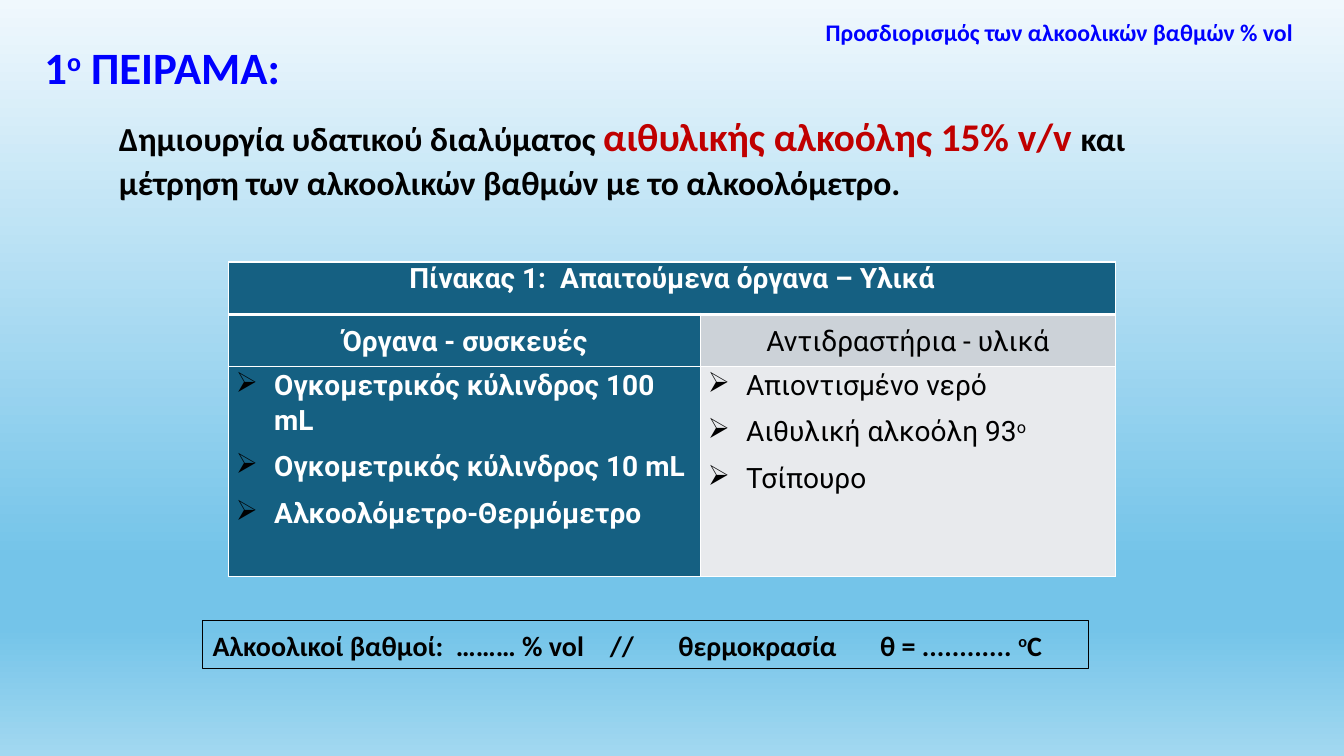
"""Builds the slide for the first alcohol-degree experiment."""
import dataclasses

import lxml.etree
import pptx
import pptx.dml.color
import pptx.enum.shapes
import pptx.enum.text
import pptx.oxml.ns
import pptx.util

PX = 9144
qn = pptx.oxml.ns.qn
Align = pptx.enum.text.PP_ALIGN
Anchor = pptx.enum.text.MSO_ANCHOR


@dataclasses.dataclass(frozen=True)
class Theme:
    blue: str = "0000FF"
    red: str = "C00000"
    black: str = "000000"
    white: str = "FFFFFF"
    teal: str = "156082"
    grey: str = "CCD2D8"
    pale: str = "E8EAED"
    sky: tuple = ((0, "F0F8FD"), (74, "74C4E9"), (83, "74C4E9"), (100, "A2D8F0"))
    text_font: str = "Calibri"
    table_font: str = "Roboto"
    header_size: int = 17
    table_size: int = 20
    body_size: int = 24
    accent_size: int = 28
    title_size: int = 32


def rgb(value):
    return pptx.dml.color.RGBColor.from_string(value)


def add_element(parent, tag, **attributes):
    return lxml.etree.SubElement(parent, qn(tag), attributes)


class SlideBuilder:
    def __init__(self, page, theme):
        self.page = page
        self.theme = theme

    def background(self):
        fill = self.page.background.fill
        fill.gradient()
        fill.gradient_angle = 270
        stops = next(self.page._element.iter(qn("a:gsLst")))
        for stop in list(stops):
            stops.remove(stop)
        for percent, color in self.theme.sky:
            stop = add_element(stops, "a:gs", pos=str(percent * 1000))
            add_element(stop, "a:srgbClr", val=color)

    def fill_para(self, para, spans, size, color, bold=True, font=None, align=Align.LEFT,
                  line=1.07, before=0, after=8):
        para.alignment = align
        para.line_spacing = line
        para.space_before = pptx.util.Pt(before)
        para.space_after = pptx.util.Pt(after)
        for text, changes in spans:
            span = para.add_run()
            span.text = text
            span.font.name = font or self.theme.text_font
            span.font.size = pptx.util.Pt(changes.get("size", size))
            span.font.bold = bold
            span.font.color.rgb = rgb(changes.get("color", color))
            if changes.get("raised"):
                span._r.get_or_add_rPr().set("baseline", "30000")

    def indent(self, para, left, first=0):
        properties = para._p.get_or_add_pPr()
        properties.set("marL", str(left * PX))
        properties.set("indent", str(first * PX))
        return properties

    def tabs(self, para, stops):
        tab_list = add_element(para._p.get_or_add_pPr(), "a:tabLst")
        for stop in stops:
            add_element(tab_list, "a:tab", pos=str(stop * PX), algn="l")

    def frame(self, shape, anchor):
        frame = shape.text_frame
        frame.word_wrap = True
        frame.auto_size = pptx.enum.text.MSO_AUTO_SIZE.NONE
        frame.vertical_anchor = anchor
        return frame.paragraphs[0]

    def placeholder(self, index, area, spans, size, color):
        shape = self.page.placeholders[index]
        shape.left, shape.top, shape.width, shape.height = (n * PX for n in area)
        para = self.frame(shape, Anchor.BOTTOM)
        self.fill_para(para, spans, size, color, after=6)
        add_element(self.indent(para, 0), "a:buNone")

    def header(self, area, text):
        shape = self.page.shapes.add_textbox(*(n * PX for n in area))
        para = self.frame(shape, Anchor.MIDDLE)
        self.fill_para(para, [(text, {})], self.theme.header_size, self.theme.blue,
                       line=0.97, after=6)
        self.indent(para, 50)

    def outlined_box(self, area, spans, stops):
        rectangle = pptx.enum.shapes.MSO_SHAPE.RECTANGLE
        shape = self.page.shapes.add_shape(rectangle, *(n * PX for n in area))
        shape.shadow.inherit = False
        shape.fill.background()
        shape.line.color.rgb = rgb(self.theme.black)
        shape.line.width = pptx.util.Pt(0.75)
        para = self.frame(shape, Anchor.TOP)
        self.fill_para(para, spans, self.theme.table_size, self.theme.black, before=6)
        self.tabs(para, stops)

    def table(self, area, columns, rows):
        shape = self.page.shapes.add_table(
            len(rows), len(columns), *(n * PX for n in area))
        table = shape.table
        table.first_row = table.horz_banding = False
        for column, width in zip(table.columns, columns):
            column.width = width * PX
        for row, height in zip(table.rows, rows):
            row.height = height * PX
        return table

    def cell(self, cell, fill, anchor, top=1, bottom=1):
        cell.margin_left = cell.margin_right = 7 * PX
        cell.margin_top = cell.margin_bottom = 0
        cell.vertical_anchor = anchor
        properties = cell._tc.get_or_add_tcPr()
        for side, points in (("L", 1), ("R", 1), ("T", top), ("B", bottom)):
            line = add_element(properties, "a:ln" + side, w=str(points * 12700))
            solid = add_element(line, "a:solidFill")
            add_element(solid, "a:srgbClr", val=self.theme.white)
        cell.fill.solid()
        cell.fill.fore_color.rgb = rgb(fill)

    def heading(self, cell, text, color, bold=True, **spacing):
        self.fill_para(cell.text_frame.paragraphs[0], [(text, {})],
                       self.theme.table_size, color, bold, self.theme.table_font,
                       Align.CENTER, **spacing)

    def bullets(self, cell, items, color, bold, align):
        frame = cell.text_frame
        for number, spans in enumerate(items):
            para = frame.add_paragraph() if number else frame.paragraphs[0]
            self.fill_para(para, spans, self.theme.table_size, color, bold,
                           self.theme.table_font, align)
            properties = self.indent(para, 38, -38)
            bullet_color = add_element(properties, "a:buClr")
            add_element(bullet_color, "a:srgbClr", val=self.theme.black)
            add_element(properties, "a:buChar", char="➢")


def main():
    theme = Theme()
    deck = pptx.Presentation()
    deck.slide_width, deck.slide_height = 1333 * PX, 750 * PX
    builder = SlideBuilder(deck.slides.add_slide(deck.slide_layouts[1]), theme)
    raised = {"raised": True}

    builder.background()
    builder.header((759, 9, 552, 48), "Προσδιορισμός των αλκοολικών βαθμών % vol")
    builder.placeholder(0, (34, 42, 271, 56),
                        [("1", {}), ("ο", raised), (" ΠΕΙΡΑΜΑ:", {})],
                        theme.title_size, theme.blue)
    builder.placeholder(1, (108, 100, 1118, 106), [
        ("Δημιουργία υδατικού διαλύματος ", {}),
        ("αιθυλικής αλκοόλης 15% v/v ",
         {"size": theme.accent_size, "color": theme.red}),
        ("και μέτρηση των αλκοολικών βαθμών με το αλκοολόμετρο.", {}),
    ], theme.body_size, theme.black)
    builder.outlined_box((201, 616, 879, 47), [
        ("Αλκοολικοί βαθμοί:  ……… % vol\t//\tθερμοκρασία\tθ = ............ ", {}),
        ("o", raised), ("C", {}),
    ], (394, 462, 662))

    table = builder.table((227, 260, 879, 312), (468, 411), (52, 52, 208))
    table.cell(0, 0).merge(table.cell(0, 1))
    columns = (
        ("Όργανα - συσκευές", theme.teal, theme.teal, theme.white, True, Align.LEFT,
         ([("Ογκομετρικός κύλινδρος 100 mL", {})],
          [("Ογκομετρικός κύλινδρος 10 mL", {})],
          [("Αλκοολόμετρο-Θερμόμετρο", {})])),
        ("Αντιδραστήρια - υλικά", theme.grey, theme.pale, theme.black, False,
         Align.JUSTIFY,
         ([("Απιοντισμένο νερό", {})],
          [("Αιθυλική αλκοόλη 93", {}), ("ο", raised)],
          [("Τσίπουρο", {})])),
    )
    for index, (name, head_fill, list_fill, color, bold, align, items) in enumerate(columns):
        caption, head, content = (table.cell(row, index) for row in range(3))
        builder.cell(caption, theme.teal, Anchor.MIDDLE, bottom=3)
        builder.cell(head, head_fill, Anchor.MIDDLE, top=3)
        builder.cell(content, list_fill, Anchor.TOP)
        builder.heading(head, name, color, bold)
        builder.bullets(content, items, color, bold, align)
    builder.heading(table.cell(0, 0), "Πίνακας 1:  Απαιτούμενα όργανα – Υλικά",
                    theme.white, line=pptx.util.Pt(10.6), after=13)
    deck.save("out.pptx")


if __name__ == "__main__":
    main()
